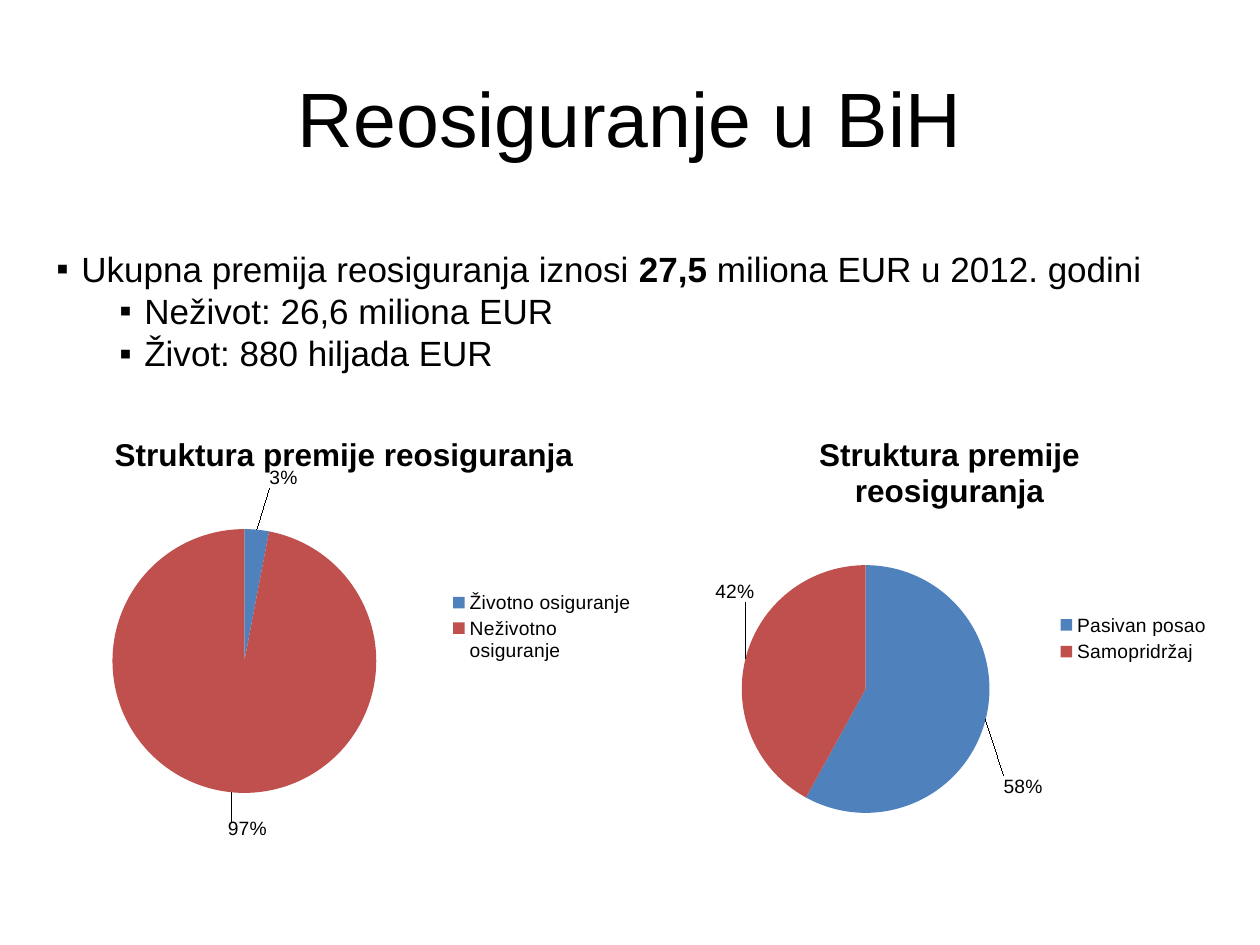
import pptx
import pptx.chart.data
import pptx.dml.color
import pptx.enum.chart
import pptx.enum.text
import pptx.oxml
import pptx.oxml.ns
import pptx.util

COLORS = {"text": "000000", "blue": "4F81BD", "red": "C0504D", "page": "FFFFFF"}
EMU_PER_PX = 914400 / 126
CHART_NS = pptx.oxml.ns.nsdecls("c")


def px(length):
    return round(length * EMU_PER_PX)


def rgb(name):
    return pptx.dml.color.RGBColor.from_string(COLORS[name])


def style_font(font, size, bold=False, name="Arial"):
    font.name = name
    font.size = pptx.util.Pt(size)
    font.bold = bold
    font.color.rgb = rgb("text")


def add_span(para, text, size, bold=False):
    span = para.add_run()
    span.text = text
    style_font(span.font, size, bold)


def add_box(page, bounds):
    box = page.shapes.add_textbox(*map(px, bounds))
    box.text_frame.word_wrap = True
    box.text_frame.vertical_anchor = pptx.enum.text.MSO_ANCHOR.MIDDLE
    return box.text_frame


def add_title(page, text):
    para = add_box(page, (63, 38, 1134, 157)).paragraphs[0]
    para.alignment = pptx.enum.text.PP_ALIGN.CENTER
    add_span(para, text, 44)


def add_bullet(para, level):
    para.level = level
    para.alignment = pptx.enum.text.PP_ALIGN.JUSTIFY
    properties = para._p.get_or_add_pPr()
    properties.set("marL", str(px(25 + 63 * level)))
    properties.set("indent", str(px(-25)))
    drawing_ns = pptx.oxml.ns.nsdecls("a")
    for element in ('buFont {} typeface="Arial"', 'buChar {} char="▪"'):
        properties.append(pptx.oxml.parse_xml(f"<a:{element.format(drawing_ns)}/>"))


def add_bullets(page, bounds, items):
    frame = add_box(page, bounds)
    frame.auto_size = pptx.enum.text.MSO_AUTO_SIZE.SHAPE_TO_FIT_TEXT
    for index, (level, spans) in enumerate(items):
        para = frame.add_paragraph() if index else frame.paragraphs[0]
        add_bullet(para, level)
        for text, bold in spans:
            add_span(para, text, 20, bold)


def manual_layout(values, inner=False, edge=True):
    parts = ['<c:layoutTarget val="inner"/>'] if inner else []
    if edge:
        parts += [f'<c:{mode} val="edge"/>' for mode in ("xMode", "yMode")]
    parts += [f'<c:{key} val="{value:.2f}"/>' if not inner else f'<c:{key} val="{value:.3f}"/>'
              for key, value in zip("xywh", values)]
    return pptx.oxml.parse_xml(
        f'<c:layout {CHART_NS}><c:manualLayout>{"".join(parts)}</c:manualLayout></c:layout>')


def within(bounds, area):
    left, top, width, height = bounds
    x, y, w, h = area
    return (x - left) / width, (y - top) / height, w / width, h / height


def place_label(point, offset):
    label = point.data_label
    style_font(label.font, 11)
    label.position = pptx.enum.chart.XL_LABEL_POSITION.OUTSIDE_END
    element = point._element.xpath(f"c:dLbls/c:dLbl[c:idx/@val='{point._idx}']")[0]
    element.xpath("c:showVal")[0].set("val", "0")
    element.xpath("c:showPercent")[0].set("val", "1")
    element.xpath("c:idx")[0].addnext(manual_layout(offset, edge=False))


def add_pie(page, bounds, title, shares, pie, legend, offsets):
    data = pptx.chart.data.CategoryChartData(number_format="#,##0")
    data.categories = list(shares)
    data.add_series("Series 1", list(shares.values()))
    chart = page.shapes.add_chart(
        pptx.enum.chart.XL_CHART_TYPE.PIE, *map(px, bounds), data).chart
    style_font(chart.font, 10, name="Calibri")

    chart.has_title = True
    add_span(chart.chart_title.text_frame.paragraphs[0], title, 18, True)
    chart.chart_title.include_in_layout = False

    chart.has_legend = True
    chart.legend.position = pptx.enum.chart.XL_LEGEND_POSITION.RIGHT
    chart.legend.include_in_layout = False
    style_font(chart.legend.font, 11)
    chart.legend._element.xpath("c:legendPos")[0].addnext(
        manual_layout(within(bounds, legend)))

    plot_area = chart._chartSpace.xpath("c:chart/c:plotArea")[0]
    for old_layout in plot_area.xpath("c:layout"):
        plot_area.remove(old_layout)
    plot_area.insert(0, manual_layout(within(bounds, pie), inner=True))

    chart.plots[0].vary_by_categories = True
    series = chart.plots[0].series[0]
    labels = series.data_labels
    labels.show_value = False
    labels.show_percentage = True
    labels.number_format = "0%"
    labels.number_format_is_linked = False
    style_font(labels.font, 11)
    for index, (color, offset) in enumerate(zip(("blue", "red"), offsets)):
        point = series.points[index]
        point.format.fill.solid()
        point.format.fill.fore_color.rgb = rgb(color)
        point.format.line.fill.background()
        place_label(point, offset)


def main():
    deck = pptx.Presentation()
    deck.slide_width, deck.slide_height = px(1260), px(945)
    page = deck.slides.add_slide(deck.slide_layouts[6])
    page.background.fill.solid()
    page.background.fill.fore_color.rgb = rgb("page")

    add_title(page, "Reosiguranje u BiH")
    add_bullets(page, (44, 241, 1171, 140), [
        (0, [("Ukupna premija reosiguranja iznosi ", False), ("27,5", True),
             (" miliona EUR u 2012. godini", False)]),
        (1, [("Neživot: 26,6 miliona EUR", False)]),
        (1, [("Život: 880 hiljada EUR", False)]),
    ])

    heading = "Struktura premije reosiguranja"
    add_pie(page, (44, 413, 600, 427), heading,
            {"Životno osiguranje": 3, "Neživotno osiguranje": 97},
            (112, 529, 265, 264), (445, 588, 190, 78), [(0.02, -0.08), (0.06, 0.05)])
    add_pie(page, (679, 413, 541, 446), heading,
            {"Pasivan posao": 58, "Samopridržaj": 42},
            (742, 565, 248, 248), (1052, 608, 160, 56), [(0.02, 0.12), (0.03, -0.12)])
    deck.save("out.pptx")


if __name__ == "__main__":
    main()
